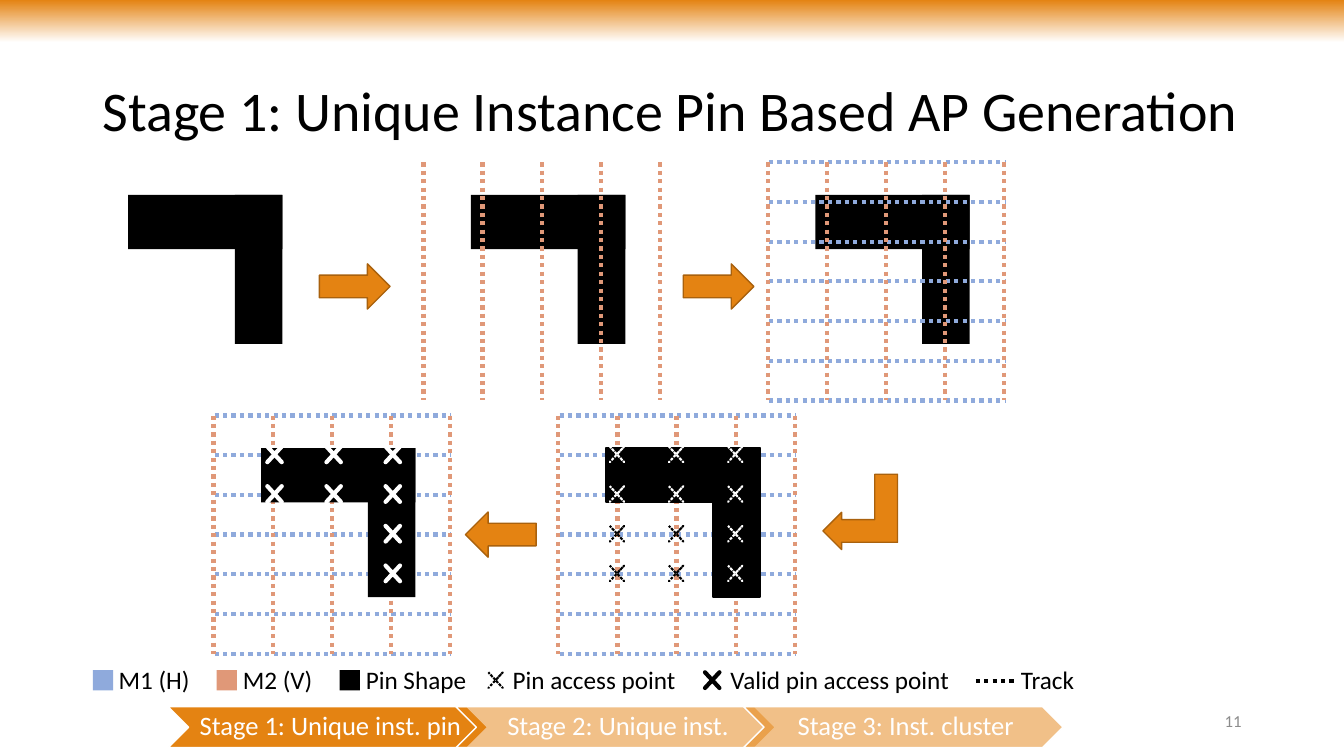
import pptx
import pptx.util
import pptx.dml.color
import pptx.enum.dml
import pptx.enum.shapes
import pptx.enum.text
import pptx.oxml.ns
from lxml import etree

Cm = pptx.util.Cm
Pt = pptx.util.Pt
SHAPE = pptx.enum.shapes.MSO_SHAPE
ALIGN = pptx.enum.text.PP_ALIGN
ANCHOR = pptx.enum.text.MSO_ANCHOR
AUTO = pptx.enum.text.MSO_AUTO_SIZE
DOTTED = pptx.enum.dml.MSO_LINE.ROUND_DOT
qn = pptx.oxml.ns.qn

COLORS = {"orange": "E48312", "brown": "A9610D", "m1": "8FAADC", "m2": "E09878",
          "black": "000000", "white": "FFFFFF", "gray": "8C8C8C"}

COL_GAP, ROW_GAP = 1.49, 1.0
GRID_W, GRID_H = 4 * COL_GAP, 6 * ROW_GAP
TOP_ROW, BOTTOM_ROW = 4.09, 10.47


def rgb(name):
    return pptx.dml.color.RGBColor.from_string(COLORS[name])


def write_text(tf, text, size=18, color="black", align=ALIGN.LEFT, anchor=ANCHOR.TOP,
               wrap=True, auto=AUTO.NONE, spacing=None, insets=None):
    """Fill a text frame; insets are left, top, right, bottom in cm."""
    tf.word_wrap, tf.auto_size, tf.vertical_anchor = wrap, auto, anchor
    if insets:
        (tf.margin_left, tf.margin_top,
         tf.margin_right, tf.margin_bottom) = map(Cm, insets)
    p = tf.paragraphs[0]
    p.alignment, p.line_spacing = align, spacing
    r = p.add_run()
    r.text = text
    r.font.name, r.font.size = "Calibri", Pt(size)
    r.font.color.rgb = rgb(color)


class Deck:
    def __init__(self):
        self.prs = pptx.Presentation()
        self.prs.slide_width, self.prs.slide_height = Cm(33.87), Cm(19.05)
        self.s = self.prs.slides.add_slide(self.prs.slide_layouts[5])

    def title(self, text):
        sp = self.s.shapes.title
        sp.left, sp.top, sp.width, sp.height = Cm(2.33), Cm(1.01), Cm(29.21), Cm(3.68)
        write_text(sp.text_frame, text, size=40, anchor=ANCHOR.MIDDLE, spacing=0.9)

    def shape(self, kind, x, y, w, h, fill, line=None, weight=1, dash=None, adj=()):
        sp = self.s.shapes.add_shape(kind, Cm(x), Cm(y), Cm(w), Cm(h))
        sp.shadow.inherit = False
        for i, value in enumerate(adj):
            sp.adjustments[i] = value
        sp.fill.solid()
        sp.fill.fore_color.rgb = rgb(fill)
        if line:
            sp.line.color.rgb = rgb(line)
            sp.line.width = Pt(weight)
            if dash:
                sp.line.dash_style = dash
        else:
            sp.line.fill.background()
        return sp

    def header_band(self):
        sp = self.shape(SHAPE.RECTANGLE, 0, 0, 33.87, 1.07, "orange")
        sp.fill.gradient()
        sp.fill.gradient_angle = 270
        for stop, color in zip(sp.fill.gradient_stops, ("orange", "white")):
            stop.color.rgb = rgb(color)

    def label(self, text, x, y, w, h=1.02, **fmt):
        sp = self.s.shapes.add_textbox(Cm(x), Cm(y), Cm(w), Cm(h))
        write_text(sp.text_frame, text, **fmt)

    def track(self, x1, y1, x2, y2, color):
        c = self.s.shapes.add_connector(pptx.enum.shapes.MSO_CONNECTOR.STRAIGHT,
                                        Cm(x1), Cm(y1), Cm(x2), Cm(y2))
        c.line.color.rgb = rgb(color)
        c.line.width = Pt(3)
        c.line.dash_style = DOTTED
        etree.SubElement(c._element.spPr, qn("a:effectLst"))

    def vertical_tracks(self, x, y):
        for col in range(5):
            cx = x + col * COL_GAP
            self.track(cx, y, cx, y + GRID_H, "m2")

    def grid(self, x, y):
        for row in range(7):
            cy = y + row * ROW_GAP
            self.track(x + 0.03, cy, x + GRID_W + 0.03, cy, "m1")
        self.vertical_tracks(x, y)

    def pin(self, x, y, line=None):
        """Draw the L-shaped pin of the panel whose grid starts at x, y."""
        for dx, w, h in ((1.2, 3.89, 1.37), (3.89, 1.2, 3.76)):
            self.shape(SHAPE.RECTANGLE, x + dx, y + 0.82, w, h, "black", line, 1.5)

    def cross(self, x, y, color, valid):
        weight, dash = (3, None) if valid else (1.5, DOTTED)
        self.shape(SHAPE.MATH_MULTIPLY, x, y, 0.7, 0.76, "white", color, weight, dash, [0])

    def access_points(self, x, y, valid):
        """Mark track crossings; valid ones are only those on the pin."""
        dx = 1.19 if valid else 1.13
        for row in range(4):
            for col in range(3):
                on_pin = row < 2 or col == 2
                if on_pin or not valid:
                    self.cross(x + dx + col * COL_GAP, y + 0.6 + row * ROW_GAP,
                               "white" if on_pin else "black", valid)

    def arrow(self, x, y, rotation=0):
        sp = self.shape(SHAPE.RIGHT_ARROW, x, y, 1.78, 1.14, "orange", "brown")
        sp.rotation = rotation

    def turn_arrow(self, x, y):
        sp = self.shape(SHAPE.BENT_UP_ARROW, x, y, 1.9, 1.88, "orange", "brown",
                        adj=(0.305, 0.25, 0.25))
        sp.rotation = 270
        sp._element.spPr.xfrm.set("flipH", "1")

    def stage(self, text, x, faded):
        sp = self.shape(SHAPE.CHEVRON, x, 17.81, 8.05, 1.03, "orange", "white")
        if faded:
            color = sp._element.spPr.find(qn("a:solidFill")).find(qn("a:srgbClr"))
            etree.SubElement(color, qn("a:alpha"), val="50000")
        write_text(sp.text_frame, text, size=19, color="white", align=ALIGN.CENTER,
                   anchor=ANCHOR.MIDDLE, spacing=0.9, insets=(0.2, 0.08, 0.08, 0.08))


def main():
    deck = Deck()
    deck.header_band()
    deck.title("Stage 1: Unique Instance Pin Based AP Generation")
    deck.label("11", 23.92, 17.66, 7.62, size=12, color="gray",
               align=ALIGN.RIGHT, anchor=ANCHOR.MIDDLE)

    deck.pin(2.03, TOP_ROW)
    deck.pin(10.67, TOP_ROW)
    deck.vertical_tracks(10.67, TOP_ROW)
    deck.pin(19.35, TOP_ROW)
    deck.grid(19.35, TOP_ROW)
    for x, valid in ((14.07, False), (5.38, True)):
        deck.grid(x, BOTTOM_ROW)
        deck.pin(x, BOTTOM_ROW, None if valid else "black")
        deck.access_points(x, BOTTOM_ROW, valid)

    deck.arrow(8.05, 6.65)
    deck.arrow(17.22, 6.65)
    deck.turn_arrow(20.73, 11.96)
    deck.arrow(11.73, 12.9, rotation=180)

    for x, color in ((2.34, "m1"), (5.46, "m2"), (8.56, "black")):
        deck.shape(SHAPE.RECTANGLE, x, 16.89, 0.51, 0.51, color)
    deck.cross(12.14, 16.76, "black", valid=False)
    deck.cross(17.6, 16.76, "black", valid=True)
    deck.track(24.59, 17.17, 25.6, 17.17, "black")
    for text, x, w in (("M1 (H)", 2.74, 2.34), ("M2 (V)", 5.87, 2.29),
                       ("Pin Shape", 8.97, 3.07), ("Pin access point", 12.67, 4.8),
                       ("Valid pin access point", 18.16, 6.1), ("Track", 25.48, 1.85)):
        deck.label(text, x, 16.61, w, wrap=False, auto=AUTO.SHAPE_TO_FIT_TEXT)

    stages = ("Stage 1: Unique inst. pin", "Stage 2: Unique inst.", "Stage 3: Inst. cluster")
    for i, text in enumerate(stages):
        deck.stage(text, 4.24 + i * 7.25, faded=i > 0)
    deck.prs.save("out.pptx")


if __name__ == "__main__":
    main()
